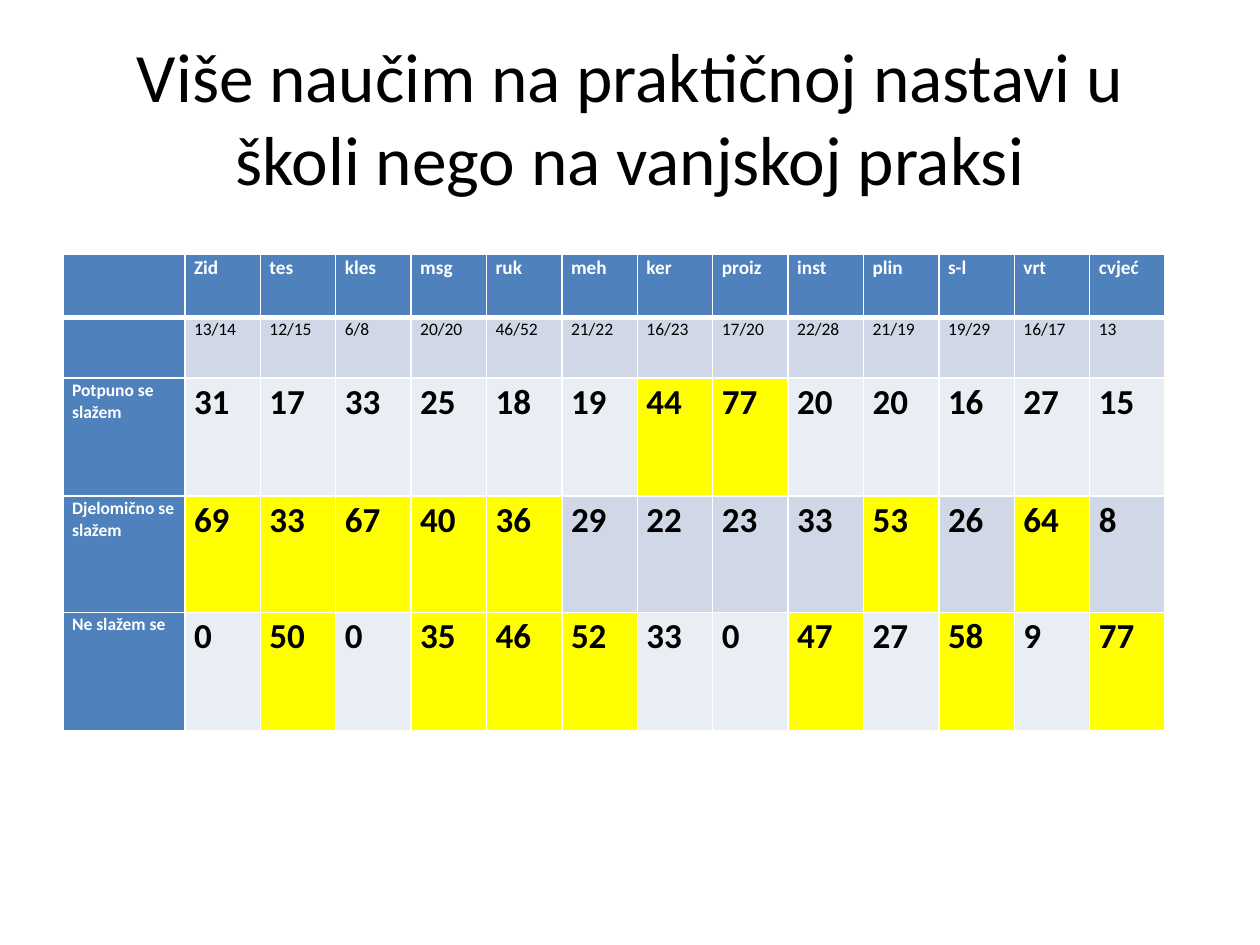
from lxml import etree
from pptx import Presentation
from pptx.dml.color import RGBColor
from pptx.enum.text import MSO_ANCHOR, PP_ALIGN
from pptx.oxml.ns import qn
from pptx.util import Pt

CENTER = PP_ALIGN.CENTER
MIDDLE = MSO_ANCHOR.MIDDLE
BLACK = RGBColor(0x00, 0x00, 0x00)
WHITE = RGBColor(0xFF, 0xFF, 0xFF)
BLUE = RGBColor(0x4F, 0x81, 0xBD)
BAND_DARK = RGBColor(0xD0, 0xD8, 0xE8)
BAND_LIGHT = RGBColor(0xE9, 0xED, 0xF4)
YELLOW = RGBColor(0xFF, 0xFF, 0x00)

TITLE = "Više naučim na praktičnoj nastavi u školi nego na vanjskoj praksi"
TRADES = "Zid tes kles msg ruk meh ker proiz inst plin s-l vrt cvjeć".split()
COUNTS = ("13/14 12/15 6/8 20/20 46/52 21/22 16/23 17/20 "
          "22/28 21/19 19/29 16/17 13").split()
ANSWERS = [
    ("Potpuno se slažem",
     [31, 17, 33, 25, 18, 19, 44, 77, 20, 20, 16, 27, 15],
     {"ker", "proiz"}),
    ("Djelomično se slažem",
     [69, 33, 67, 40, 36, 29, 22, 23, 33, 53, 26, 64, 8],
     {"Zid", "tes", "kles", "msg", "ruk", "plin", "vrt"}),
    ("Ne slažem se",
     [0, 50, 0, 35, 46, 52, 33, 0, 47, 27, 58, 9, 77],
     {"tes", "msg", "ruk", "meh", "inst", "s-l", "cvjeć"}),
]
COLUMN_WIDTHS = [69.7] + [43.1] * len(TRADES)
ROW_HEIGHTS = [36, 34.5, 67.5, 66.5, 67.5]


class SlideBuilder:
    font = "Calibri"
    line_spacing = 1.07
    side_inset = 5.2

    def __init__(self, slide):
        self.slide = slide

    def add_run(self, para, text, size, color, bold=False):
        span = para.add_run()
        span.text = text
        span.font.name = self.font
        span.font.size = Pt(size)
        span.font.bold = bold
        span.font.color.rgb = color

    def add_title(self, text, left, top, width, height, size):
        box = self.slide.shapes.add_textbox(Pt(left), Pt(top), Pt(width), Pt(height))
        frame = box.text_frame
        frame.word_wrap = True
        frame.vertical_anchor = MIDDLE
        para = frame.paragraphs[0]
        para.alignment = CENTER
        self.add_run(para, text, size, BLACK)

    def add_table(self, left, top, widths, heights):
        frame = self.slide.shapes.add_table(
            len(heights), len(widths), Pt(left), Pt(top),
            Pt(sum(widths)), Pt(sum(heights)))
        table = frame.table
        for column, width in zip(table.columns, widths):
            column.width = Pt(width)
        for row, height in zip(table.rows, heights):
            row.height = Pt(height)
        return table

    def add_borders(self, cell, top, bottom):
        properties = cell._tc.get_or_add_tcPr()
        for side, width in (("L", 1), ("R", 1), ("T", top), ("B", bottom)):
            line = etree.SubElement(properties, qn(f"a:ln{side}"), w=str(Pt(width)))
            fill = etree.SubElement(line, qn("a:solidFill"))
            etree.SubElement(fill, qn("a:srgbClr"), val=str(WHITE))

    def fill_cell(self, cell, text, fill, size, color, bold, top=1, bottom=1):
        self.add_borders(cell, top, bottom)
        cell.fill.solid()
        cell.fill.fore_color.rgb = fill
        cell.margin_left = cell.margin_right = Pt(self.side_inset)
        cell.margin_top = cell.margin_bottom = Pt(0)
        if text:
            para = cell.text_frame.paragraphs[0]
            para.line_spacing = self.line_spacing
            self.add_run(para, text, size, color, bold)


def main():
    deck = Presentation()
    deck.slide_width = Pt(720)
    deck.slide_height = Pt(540)
    page = SlideBuilder(deck.slides.add_slide(deck.slide_layouts[6]))
    page.add_title(TITLE, 36, 21.6, 648, 90, 39.6)

    table = page.add_table(36, 145.5, COLUMN_WIDTHS, ROW_HEIGHTS)
    for column, trade in enumerate([""] + TRADES):
        page.fill_cell(table.cell(0, column), trade, BLUE, 11, WHITE, True, bottom=3)

    page.fill_cell(table.cell(1, 0), "", BLUE, 10, WHITE, True, top=3)
    for column, count in enumerate(COUNTS, 1):
        page.fill_cell(table.cell(1, column), count, BAND_DARK, 10, BLACK, False, top=3)

    for row, (answer, values, highlighted) in enumerate(ANSWERS, 2):
        page.fill_cell(table.cell(row, 0), answer, BLUE, 10, WHITE, True)
        band = BAND_DARK if row % 2 else BAND_LIGHT
        for column, (trade, value) in enumerate(zip(TRADES, values), 1):
            fill = YELLOW if trade in highlighted else band
            page.fill_cell(table.cell(row, column), str(value), fill, 20, BLACK, True)

    deck.save("out.pptx")


if __name__ == "__main__":
    main()
